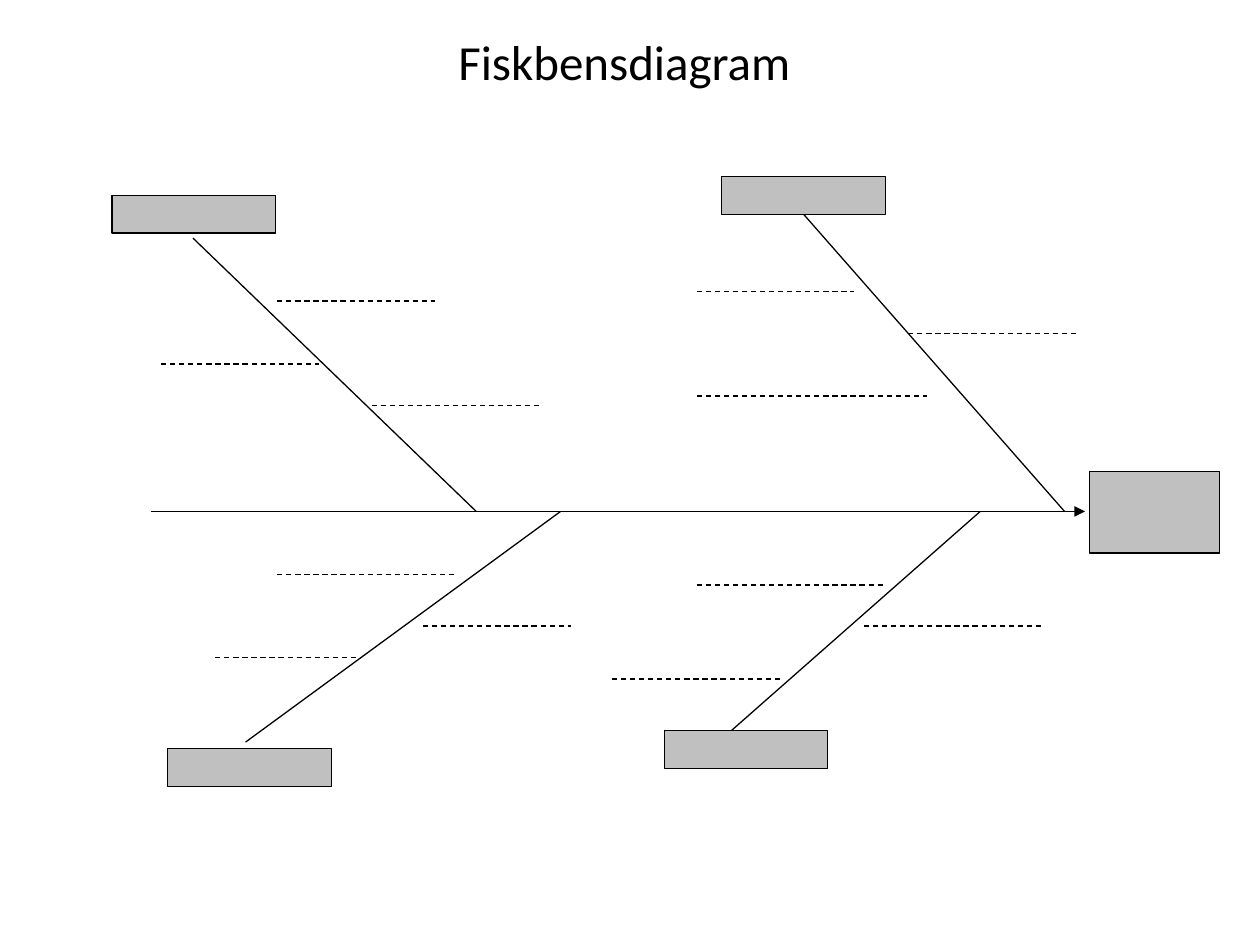
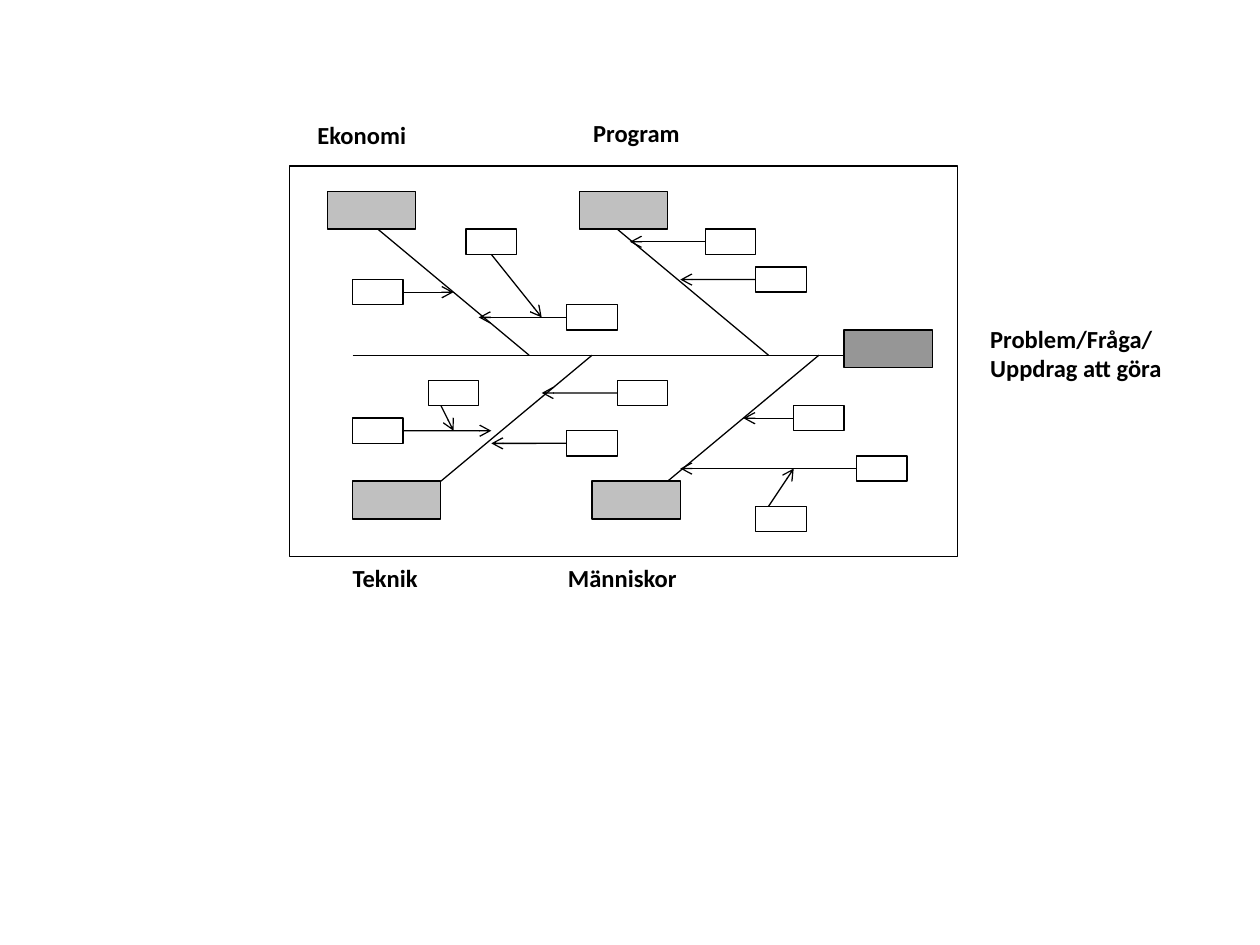
from dataclasses import dataclass

from lxml.etree import SubElement
from pptx import Presentation
from pptx.dml.color import RGBColor as RGB
from pptx.enum.dml import MSO_LINE_DASH_STYLE as Dash
from pptx.enum.shapes import MSO_CONNECTOR as Link, MSO_SHAPE as Shape
from pptx.enum.text import MSO_ANCHOR as Anchor, PP_ALIGN as Align
from pptx.oxml.ns import qn
from pptx.util import Cm, Pt


@dataclass(frozen=True)
class Theme:
    ink: RGB = RGB(0, 0, 0)
    paper: RGB = RGB(255, 255, 255)
    label: RGB = RGB(0xC0, 0xC0, 0xC0)
    head: RGB = RGB(0x96, 0x96, 0x96)
    font: str = "Calibri"
    title: int = 28
    body: int = 14
    line: float = 0.75


LOOK = Theme()
TOP, LEFT, BOTTOM, RIGHT = range(4)  # sides of a rectangle


# Elements: all places and sizes in centimetres
def add_box(shapes, x, y, wide, high, fill):
    box = shapes.add_shape(Shape.RECTANGLE, Cm(x), Cm(y), Cm(wide), Cm(high))
    box.shadow.inherit = False
    box.fill.solid()
    box.fill.fore_color.rgb = fill
    box.line.color.rgb = LOOK.ink
    box.line.width = Pt(LOOK.line)
    return box


def add_line(shapes, x1, y1, x2, y2, tip=None, dash=None):
    line = shapes.add_connector(Link.STRAIGHT, Cm(x1), Cm(y1), Cm(x2), Cm(y2))
    line.line.color.rgb = LOOK.ink
    line.line.width = Pt(LOOK.line)
    if dash:
        line.line.dash_style = dash
    props = line._element.spPr
    if tip:
        SubElement(props.find(qn("a:ln")), qn("a:tailEnd"), type=tip)
    SubElement(props, qn("a:effectLst"))
    return line


def add_text(shapes, text, x, y, wide, high, size=LOOK.body, bold=True,
             align=Align.LEFT, anchor=Anchor.TOP, wrap=True):
    frame = shapes.add_textbox(Cm(x), Cm(y), Cm(wide), Cm(high)).text_frame
    frame.word_wrap = wrap
    frame.vertical_anchor = anchor
    para = frame.paragraphs[0]
    para.text = text
    para.alignment = align
    font = para.font
    font.name, font.size, font.bold = LOOK.font, Pt(size), bold
    font.color.rgb = LOOK.ink


# Slide 1: empty fishbone form
def draw_form(shapes):
    mid = 10.31
    add_line(shapes, 3.05, mid, 21.87, mid, tip="triangle")

    # Bones: outer end, then x on the spine
    bones = [add_line(shapes, x, y, end, mid) for x, y, end in (
        (16.21, 4.32, 21.46), (14.48, 14.96, 19.76),
        (4.95, 14.96, 11.3), (3.89, 4.8, 9.6))]

    # Dashed writing lines: left, right, height
    for x1, x2, y in (
            (5.59, 8.76, 6.07), (7.49, 10.87, 8.18), (3.25, 6.43, 7.34),
            (5.59, 9.17, 11.58), (4.34, 7.29, 13.26), (8.53, 11.51, 12.62),
            (14.05, 17.22, 5.87), (14.05, 18.69, 7.98), (18.31, 21.69, 6.73),
            (14.05, 17.86, 11.79), (12.34, 15.75, 13.69),
            (17.42, 21.03, 12.62)):
        add_line(shapes, x1, y, x2, y, dash=Dash.DASH)

    add_text(shapes, "Fiskbensdiagram", 2.49, 0.33, 20.19, 1.8, LOOK.title,
             bold=False, align=Align.CENTER, anchor=Anchor.MIDDLE)

    # Label boxes and the head
    labels = [add_box(shapes, x, y, 3.3, 0.76, LOOK.label) for x, y in (
        (14.55, 3.56), (2.26, 3.94), (3.38, 15.09), (13.39, 14.73))]
    bones[0].begin_connect(labels[0], BOTTOM)
    add_box(shapes, 21.97, 9.5, 2.62, 1.65, LOOK.label)


# Slide 2: worked fishbone, laid on a grid inside the frame
STEP = 2.54 / 10
EDGE_X, EDGE_Y = 5.84, 3.35


def place(col, row):
    return EDGE_X + col * STEP, EDGE_Y + row * STEP


def grid_box(shapes, col, row, cols, rows, fill):
    return add_box(shapes, *place(col, row), cols * STEP, rows * STEP, fill)


def grid_line(shapes, start, end, tip=None):
    return add_line(shapes, *place(*start), *place(*end), tip=tip)


def draw_fish(shapes):
    fish = shapes.add_group_shape().shapes
    grid_box(fish, 0, 0, 53, 31, LOOK.paper)
    grid_box(fish, 44, 13, 7, 3, LOOK.head)

    # Spine and bones
    mid = 15
    grid_line(fish, (5, mid), (44, mid))
    for start, end in (((7, 5), (19, mid)), ((26, 5), (38, mid)),
                       ((24, mid), (12, 25)), ((42, mid), (30, 25))):
        grid_line(fish, start, end)
    for col, row in ((23, 2), (3, 2), (5, 25), (24, 25)):
        grid_box(fish, col, row, 7, 3, LOOK.label)

    # Causes: corner, side the arrow leaves from, arrow tip
    causes = (
        ((5, 9), RIGHT, (13, 10)), ((22, 11), LEFT, (15, 12)),
        ((14, 5), BOTTOM, (20, 12)), ((33, 5), LEFT, (27, 6)),
        ((37, 8), LEFT, (31, 9)), ((5, 20), RIGHT, (16, 21)),
        ((26, 17), LEFT, (20, 18)), ((22, 21), LEFT, (16, 22)),
        ((45, 23), LEFT, (31, 24)), ((40, 19), LEFT, (36, 20)))
    for corner, side, tip in causes:
        box = grid_box(fish, *corner, 4, 2, LOOK.paper)
        grid_line(fish, corner, tip, "arrow").begin_connect(box, side)

    # Causes whose arrow leaves off the middle of a side
    for corner, start, tip in (((11, 17), (12, 19), (13, 21)),
                               ((37, 27), (38, 27), (40, 24))):
        grid_box(fish, *corner, 4, 2, LOOK.paper)
        grid_line(fish, start, tip, "arrow")

    # Captions around the frame
    add_text(shapes, "Program", 11.56, 2.26, 2.54, 0.84,
             align=Align.CENTER, wrap=False)
    add_text(shapes, "Teknik", 6.38, 11.23, 2.77, 0.84, align=Align.CENTER)
    add_text(shapes, "Människor", 11.2, 11.23, 2.72, 0.86, wrap=False)
    add_text(shapes, "Problem/Fråga/\vUppdrag att göra", 19.71, 6.4, 5, 1.45)
    add_text(shapes, "Ekonomi", 6.15, 2.29, 3.48, 0.84)


def main():
    deck = Presentation()
    deck.slide_width, deck.slide_height = Cm(25.4), Cm(19.05)
    blank = deck.slide_layouts[6]
    for draw in (draw_form, draw_fish):
        draw(deck.slides.add_slide(blank).shapes)
    deck.save("out.pptx")


if __name__ == "__main__":
    main()
